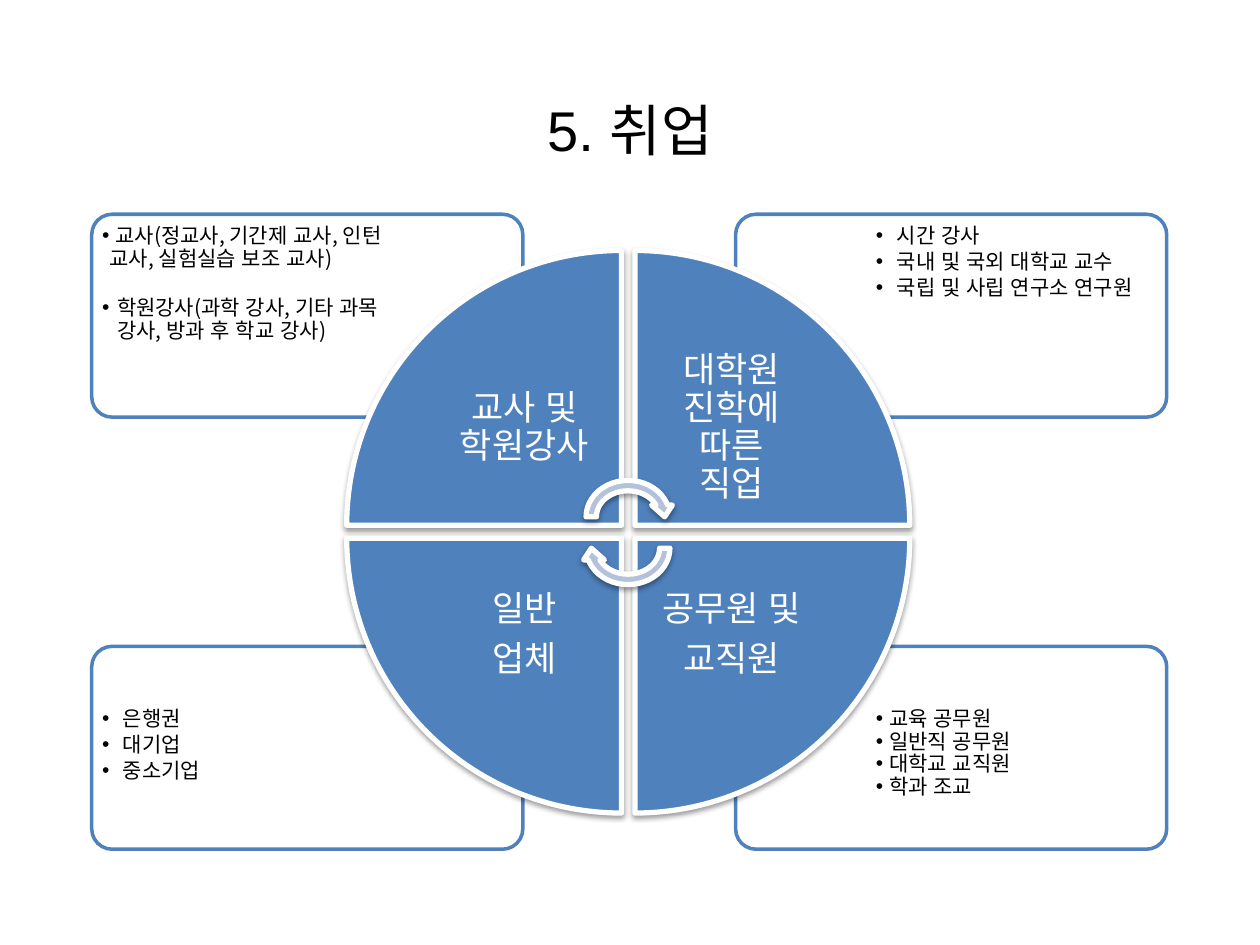
"""Build the employment slide: a four-part career wheel with a list in each corner."""
from dataclasses import dataclass

from lxml.etree import SubElement
from pptx import Presentation
from pptx.dml.color import RGBColor as Rgb
from pptx.enum.lang import MSO_LANGUAGE_ID as Language
from pptx.enum.shapes import MSO_SHAPE as Preset
from pptx.enum.text import MSO_ANCHOR as Anchor, PP_ALIGN as Align
from pptx.oxml.ns import qn
from pptx.util import Cm, Pt

COLOURS = {"blue": "4F81BD", "pale": "B3C1DB", "white": "FFFFFF", "black": "000000"}
FONT = "Noto Sans CJK KR"

BOX_LEFTS, BOX_TOPS = (1.85, 14.83), (4.32, 13.03)
LIST_LEFTS, LIST_TOPS = (1.93, 17.53), (4.42, 14.15)
WEDGE_LEFTS, WEDGE_TOPS, WEDGE_SIZE = (6.99, 12.8), (5.05, 10.85), 5.54
LABEL_SIZE = 3.91
HANGING = 0.3


@dataclass(frozen=True)
class Item:
    text: str
    indent: float = HANGING
    after: float = 1.8


@dataclass(frozen=True)
class Quadrant:
    column: int
    row: int
    rotation: int
    label: tuple[str, ...]
    items: tuple[Item, ...]


QUADRANTS = (
    Quadrant(0, 0, 0, ("교사 및 학원강사",), (
        Item(" 교사(정교사, 기간제 교사, 인턴 교사, 실험실습 보조 교사)", 0.15, 15),
        Item("학원강사(과학 강사, 기타 과목 강사, 방과 후 학교 강사)"))),
    Quadrant(1, 0, 90, ("대학원 진학에 따른\v직업",), (
        Item(" 시간 강사"), Item(" 국내 및 국외 대학교 교수"),
        Item(" 국립 및 사립 연구소 연구원"))),
    Quadrant(1, 1, 180, ("공무원 및", "교직원"), tuple(
        Item(f" {job}", 0, 0)
        for job in ("교육 공무원", "일반직 공무원", "대학교 교직원", "학과 조교"))),
    Quadrant(0, 1, 270, ("일반", "업체"), (
        Item(" 은행권"), Item(" 대기업"), Item(" 중소기업"))),
)


def rgb(name: str) -> Rgb:
    return Rgb.from_string(COLOURS[name])


def write(para, text: str, *, size: float, colour: str, font: str = FONT,
          align=Align.LEFT, spacing: float = 0.9, after: float = 0) -> None:
    para.text = text
    para.alignment, para.line_spacing, para.space_after = align, spacing, Pt(after)
    para.space_before = Pt(0)
    for span in para.runs:
        span.font.size, span.font.name = Pt(size), font
        span.font.color.rgb = rgb(colour)
        span.font.language_id = Language.KOREAN
        if font == FONT:
            SubElement(span.font._element, qn("a:ea"), typeface=font)


def add_bullet(para, indent: float) -> None:
    para.level = 1
    properties = para._p.get_or_add_pPr()
    properties.set("marL", str(Cm(indent)))
    properties.set("indent", str(-Cm(indent)))
    SubElement(properties, qn("a:buFont"), typeface="Arial")
    SubElement(properties, qn("a:buChar"), char="•")


def add_shadow(shape) -> None:
    effects = shape._element.spPr.find(qn("a:effectLst"))
    shadow = SubElement(effects, qn("a:outerShdw"), blurRad=str(Pt(3.1)),
                        dist=str(Pt(1.6)), dir="5400000", rotWithShape="0")
    tint = SubElement(shadow, qn("a:srgbClr"), val=COLOURS["black"])
    SubElement(tint, qn("a:alpha"), val="38000")


def draw(page, preset, left: float, top: float, width: float, height: float, *,
         fill: str, line: str, weight: float, rotation: int = 0):
    shape = page.shapes.add_shape(preset, Cm(left), Cm(top), Cm(width), Cm(height))
    shape.rotation = rotation
    shape.shadow.inherit = False
    shape.fill.solid()
    shape.fill.fore_color.rgb = rgb(fill)
    shape.line.color.rgb = rgb(line)
    shape.line.width = Pt(weight)
    return shape


def add_frame(page, left: float, top: float, width: float, height: float,
              inset: float, anchor):
    box = page.shapes.add_textbox(Cm(left), Cm(top), Cm(width), Cm(height))
    frame = box.text_frame
    frame.word_wrap, frame.vertical_anchor = True, anchor
    frame.margin_left = frame.margin_right = Cm(inset)
    frame.margin_top = frame.margin_bottom = Cm(inset)
    return frame


def next_para(frame, index: int):
    return frame.add_paragraph() if index else frame.paragraphs[0]


def draw_corner(page, quadrant: Quadrant) -> None:
    column, row = quadrant.column, quadrant.row
    box = draw(page, Preset.ROUNDED_RECTANGLE, BOX_LEFTS[column], BOX_TOPS[row],
               8.69, 4.09, fill="white", line="blue", weight=2)
    box.adjustments[0] = 0.1
    tint = box._element.spPr.find(qn("a:solidFill"))[0]
    SubElement(tint, qn("a:alpha"), val="90000")
    frame = add_frame(page, LIST_LEFTS[column], LIST_TOPS[row], 5.89, 2.9, 0.13, Anchor.TOP)
    for index, item in enumerate(quadrant.items):
        para = next_para(frame, index)
        add_bullet(para, item.indent)
        write(para, item.text, size=12, colour="black", after=item.after)


def draw_wedge(page, quadrant: Quadrant) -> None:
    left, top = WEDGE_LEFTS[quadrant.column], WEDGE_TOPS[quadrant.row]
    add_shadow(draw(page, Preset.PIE_WEDGE, left, top, WEDGE_SIZE, WEDGE_SIZE,
                    fill="blue", line="white", weight=3, rotation=quadrant.rotation))
    offset = WEDGE_SIZE - LABEL_SIZE
    frame = add_frame(page, left + offset * (1 - quadrant.column),
                      top + offset * (1 - quadrant.row),
                      LABEL_SIZE, LABEL_SIZE, 0.41, Anchor.MIDDLE)
    for index, text in enumerate(quadrant.label):
        write(next_para(frame, index), text, size=20, colour="white",
              align=Align.CENTER, after=7)


def main() -> None:
    deck = Presentation()
    deck.slide_width, deck.slide_height = Cm(25.4), Cm(19.05)
    page = deck.slides.add_slide(deck.slide_layouts[5])

    title = page.shapes.title
    title.left, title.top, title.width, title.height = Cm(1.27), Cm(1.52), Cm(22.86), Cm(2.16)
    title.text_frame.vertical_anchor = Anchor.MIDDLE
    write(title.text_frame.paragraphs[0], "5. 취업", size=32, colour="black",
          font="Arial", align=Align.CENTER, spacing=1)

    for quadrant in reversed(QUADRANTS):
        draw_corner(page, quadrant)
    for quadrant in QUADRANTS:
        draw_wedge(page, quadrant)
    for top, rotation in ((9.58, 0), (10.21, 180)):
        add_shadow(draw(page, Preset.CIRCULAR_ARROW, 11.71, top, 1.9, 1.68,
                        fill="pale", line="white", weight=3, rotation=rotation))

    deck.save("out.pptx")


if __name__ == "__main__":
    main()
